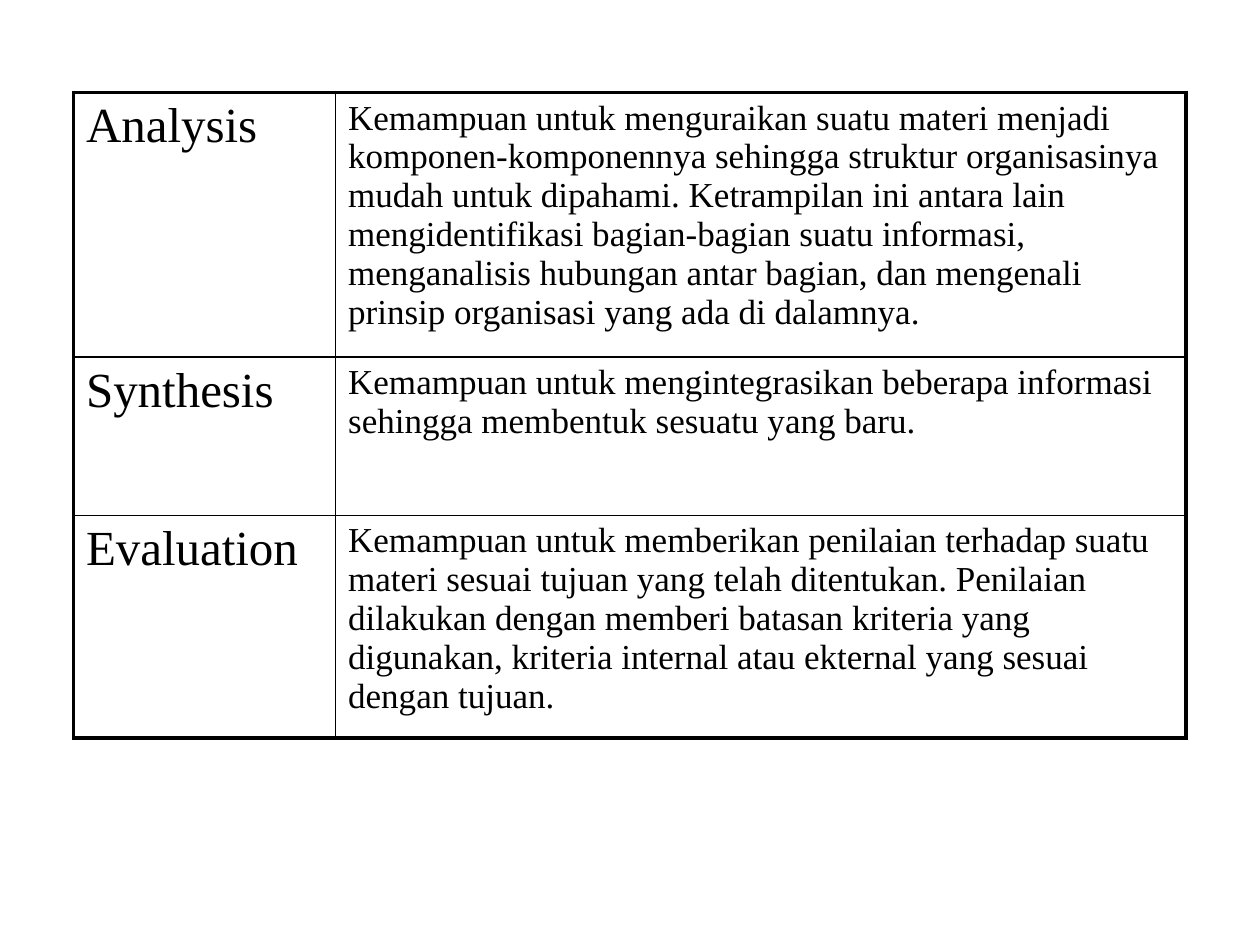
import pptx
import pptx.dml.color
import pptx.oxml
import pptx.oxml.ns
import pptx.util

BLACK = pptx.dml.color.RGBColor(0, 0, 0)
WHITE = pptx.dml.color.RGBColor(255, 255, 255)
THICK, THIN = 2.25, 1

ROWS = [
    ("Analysis",
     "Kemampuan untuk menguraikan suatu materi menjadi "
     "komponen-komponennya sehingga struktur organisasinya mudah untuk "
     "dipahami. Ketrampilan ini antara lain mengidentifikasi "
     "bagian-bagian suatu informasi, menganalisis hubungan antar bagian, "
     "dan mengenali prinsip organisasi yang ada di dalamnya."),
    ("Synthesis",
     "Kemampuan untuk mengintegrasikan beberapa informasi sehingga "
     "membentuk sesuatu yang baru."),
    ("Evaluation",
     "Kemampuan untuk memberikan penilaian terhadap suatu materi sesuai "
     "tujuan yang telah ditentukan. Penilaian dilakukan dengan memberi "
     "batasan kriteria yang digunakan, kriteria internal atau ekternal "
     "yang sesuai dengan tujuan."),
]


class Deck:
    """Holds the style and the current slide."""

    font = {"name": "Times New Roman", "bold": False}
    sizes = (28, 20)

    def __init__(self, wide, high):
        self.show = pptx.Presentation()
        self.show.slide_width = pptx.util.Inches(wide)
        self.show.slide_height = pptx.util.Inches(high)
        self.slide = self.show.slides.add_slide(self.show.slide_layouts[6])

    def x(self, share):
        return round(self.show.slide_width * share / 100)

    def y(self, share):
        return round(self.show.slide_height * share / 100)

    def table(self, left, top, cols, rows, data):
        """Place a table; lengths are percentages of the slide."""
        frame = self.slide.shapes.add_table(
            len(rows), len(cols), self.x(left), self.y(top),
            self.x(sum(cols)), self.y(sum(rows)))
        grid = frame.table
        grid.first_row = grid.horz_banding = False
        for col, share in zip(grid.columns, cols):
            col.width = self.x(share)
        for row, share in zip(grid.rows, rows):
            row.height = self.y(share)
        for r, line in enumerate(data):
            for c, text in enumerate(line):
                cell = grid.cell(r, c)
                self.fill(cell, text, self.sizes[c])
                self.edge(cell, {
                    "lnL": c == 0, "lnR": c == len(cols) - 1,
                    "lnT": r == 0, "lnB": r == len(rows) - 1})

    def fill(self, cell, text, size):
        """Write and format one cell."""
        cell.fill.solid()
        cell.fill.fore_color.rgb = WHITE
        cell.text = text
        font = cell.text_frame.paragraphs[0].runs[0].font
        for key, value in {**self.font, "size": pptx.util.Pt(size)}.items():
            setattr(font, key, value)
        font.color.rgb = BLACK

    def edge(self, cell, sides):
        """Draw borders, thick on the outer sides; they precede the fill."""
        props = cell._tc.get_or_add_tcPr()
        for spot, (side, outer) in enumerate(sides.items()):
            width = pptx.util.Pt(THICK if outer else THIN)
            props.insert(spot, pptx.oxml.parse_xml(
                f'<a:{side} {pptx.oxml.ns.nsdecls("a")} w="{width}">'
                f'<a:solidFill><a:srgbClr val="{BLACK}"/></a:solidFill>'
                f'</a:{side}>'))


def main():
    deck = Deck(10, 7.5)
    # Table of thinking skills
    deck.table(5.83, 9.78, (20.8, 67.5), (28, 16.75, 23.55), ROWS)
    deck.show.save("out.pptx")


if __name__ == "__main__":
    main()
